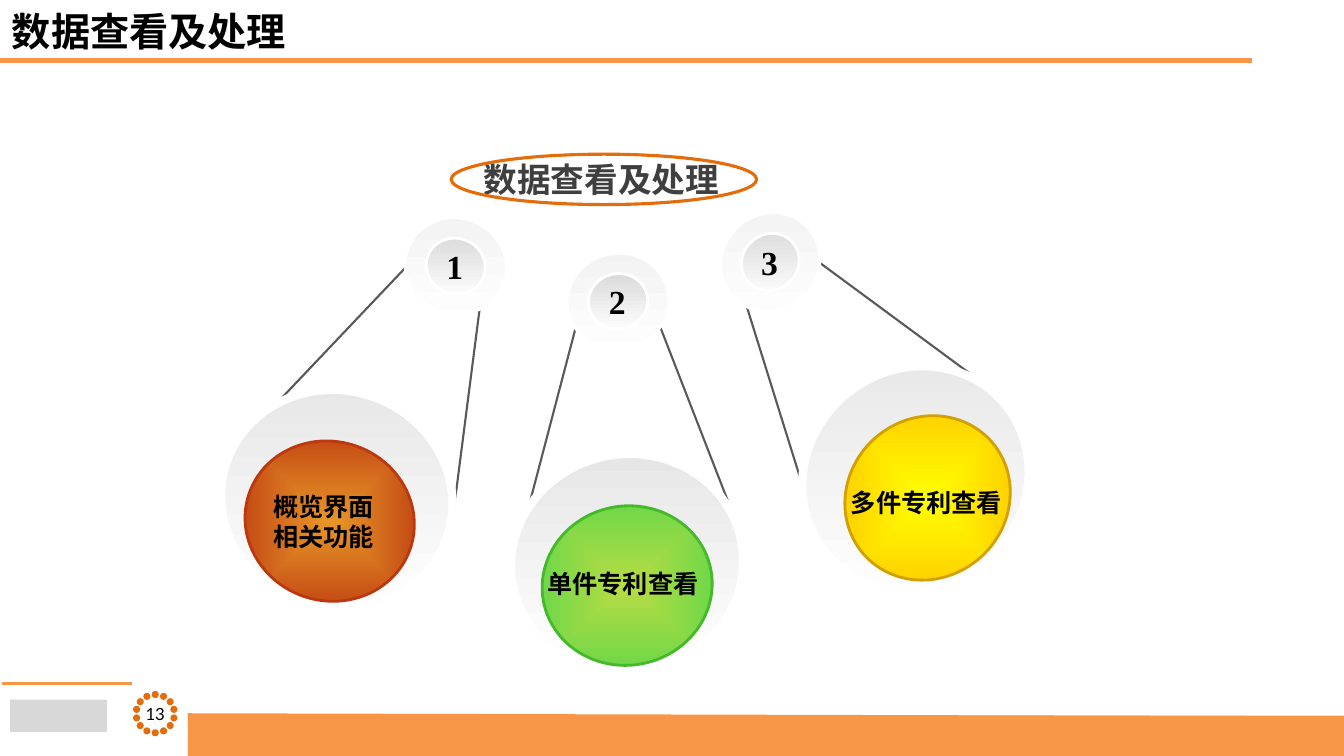
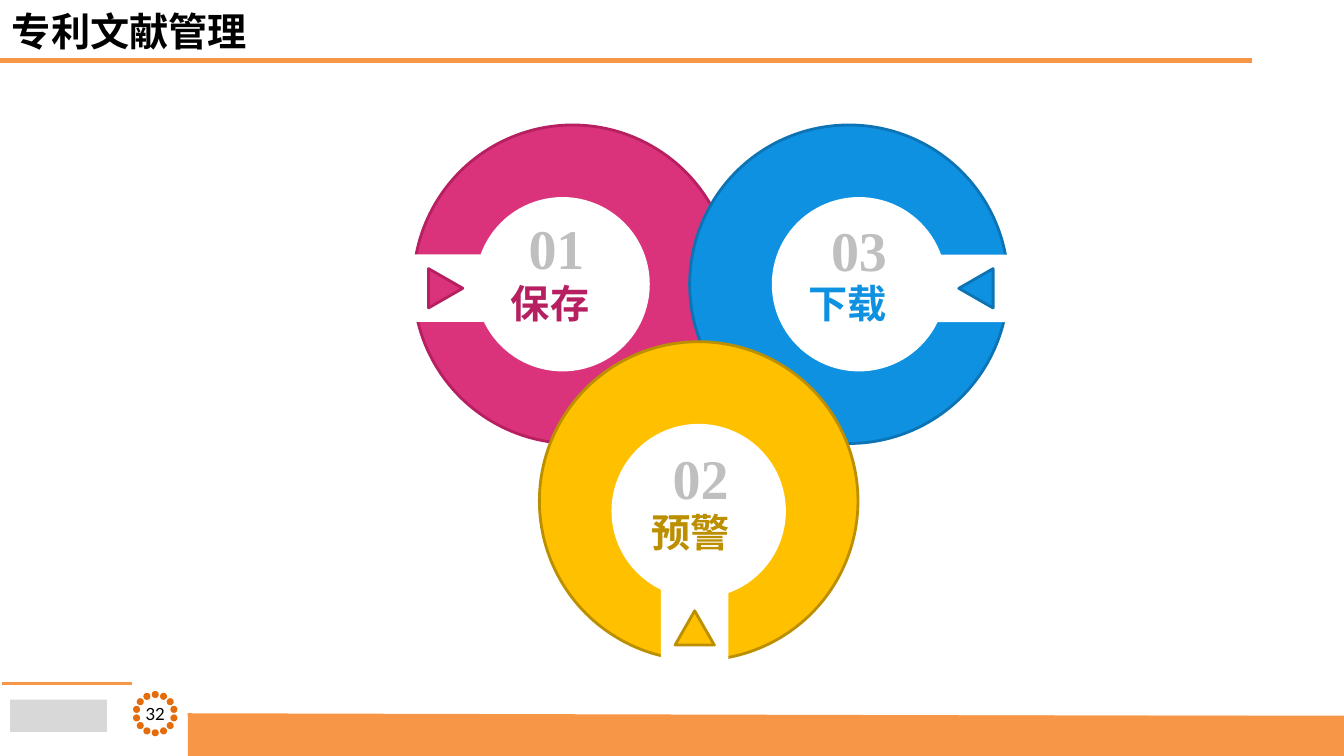
import math

from pptx import Presentation
from pptx import util as u
from pptx.dml.color import RGBColor
from pptx.enum import shapes, text
from pptx.oxml import ns, parse_xml
from pptx.util import Inches

COLOURS = {
    "band": "F79646", "accent": "E46C0A", "black": "000000", "white": "FFFFFF",
    "heading": "3F3F3F", "spoke": "595959", "number": "BFBFBF",
    "halo": "F2F2F2", "knob": "D8D8D8", "ball": "E4E4E4",
    "rust": "BC3910", "amber": "E89628",
    "green": "64D749", "lime": "B8DC44", "green edge": "44B929",
    "gold": "FFC000", "yellow": "FFFF00", "yellow edge": "D2A000",
    "pink": "DB337B", "pink edge": "B62060",
    "blue": "0F91E1", "blue edge": "0C74B4", "gold edge": "BC8F00",
}
CJK_FONT = "Noto Sans CJK SC"
SERIF_FONT = "Times New Roman"
OVAL = shapes.MSO_SHAPE.OVAL
RECTANGLE = shapes.MSO_SHAPE.RECTANGLE
TRIANGLE = shapes.MSO_SHAPE.ISOSCELES_TRIANGLE


def add_text(page, wording, left, top, width, height, colour="black", size=18, font="Lato",
             bold=True, align=None, spacing=None, centred=False):
    """Add one paragraph; centred drops the margins and centres both ways."""
    box = page.shapes.add_textbox(Inches(left), Inches(top), Inches(width), Inches(height))
    frame = box.text_frame
    frame.word_wrap = True
    if centred:
        align = text.PP_ALIGN.CENTER
        frame.vertical_anchor = text.MSO_ANCHOR.MIDDLE
        frame.margin_left = frame.margin_right = frame.margin_top = frame.margin_bottom = 0
    else:
        frame.auto_size = text.MSO_AUTO_SIZE.SHAPE_TO_FIT_TEXT
    para = frame.paragraphs[0]
    para.alignment = align
    para.line_spacing = spacing
    span = para.add_run()
    span.text = wording
    span.font.size = u.Pt(size)
    span.font.name = font
    span.font.bold = bold
    span.font.color.rgb = RGBColor.from_string(COLOURS[colour])
    east_asian = parse_xml(f'<a:ea {ns.nsdecls("a")} typeface="{CJK_FONT}"/>')
    span.font._element.find(ns.qn("a:latin")).addnext(east_asian)


def add_figure(page, kind, x, y, width, height, fill=None, line=None, weight=2,
               turn=0, radial=False):
    """Add a shape centred on x, y; fill is a colour name or a list of (percent, name) stops."""
    figure = page.shapes.add_shape(kind, Inches(x - width / 2), Inches(y - height / 2),
                                   Inches(width), Inches(height))
    figure.shadow.inherit = False
    figure.rotation = turn
    if isinstance(fill, str):
        figure.fill.solid()
        figure.fill.fore_color.rgb = RGBColor.from_string(COLOURS[fill])
    else:
        figure.fill.background()
    if isinstance(fill, list):
        stops = "".join(f'<a:gs pos="{percent * 1000}"><a:srgbClr val="{COLOURS[name]}"/></a:gs>'
                        for percent, name in fill)
        course = ('<a:path path="rect"><a:fillToRect l="50000" t="50000" r="50000" b="50000"/></a:path>'
                  if radial else '<a:lin ang="5400000" scaled="0"/>')
        gradient = parse_xml(f'<a:gradFill {ns.nsdecls("a")} rotWithShape="0">'
                             f'<a:gsLst>{stops}</a:gsLst>{course}</a:gradFill>')
        properties = figure._element.spPr
        properties.replace(properties.find(ns.qn("a:noFill")), gradient)
    if line:
        figure.line.color.rgb = RGBColor.from_string(COLOURS[line])
        figure.line.width = u.Pt(weight)
    else:
        figure.line.fill.background()


deck = Presentation()
deck.slide_width, deck.slide_height = Inches(13.33), Inches(7.5)

# What the slides share: rules, band, plain footer block, dotted page number, title
rules = [
    (13.33, 7.12, 1.86, 7.09, "band", 2),
    (1.31, 6.78, 0.02, 6.78, "band", 2),
    (0, 0.6, 12.42, 0.6, "band", 3),
]
spokes = [(*ends, "spoke", 1.5) for ends in [
    (4.48, 5.22, 4.8, 2.73), (4.15, 2.52, 2.28, 4.49),
    (7.34, 5.28, 6.43, 2.94), (5.76, 3.06, 5.07, 5.69),
    (9.87, 3.89, 7.85, 2.4), (7.35, 2.86, 8.16, 5.46),
]]
DOTS = 14
pages = []
for title, number, lines in [("数据查看及处理", "13", rules + spokes),
                             ("专利文献管理", "32", rules)]:
    page = deck.slides.add_slide(deck.slide_layouts[6])
    pages.append(page)
    for x1, y1, x2, y2, colour, weight in lines:
        line = page.shapes.add_connector(shapes.MSO_CONNECTOR.STRAIGHT, Inches(x1), Inches(y1),
                                         Inches(x2), Inches(y2))
        line.line.color.rgb = RGBColor.from_string(COLOURS[colour])
        line.line.width = u.Pt(weight)
        line._element.spPr.append(parse_xml(f'<a:effectLst {ns.nsdecls("a")}/>'))
    add_figure(page, RECTANGLE, 7.6, 7.3, 11.47, 0.4, "band")
    add_figure(page, RECTANGLE, 0.58, 7.1, 0.96, 0.32, "knob")
    for dot in range(DOTS):
        angle = 2 * math.pi * dot / DOTS
        add_figure(page, OVAL, 1.54 + 0.19 * math.sin(angle), 7.08 - 0.19 * math.cos(angle),
                   0.07, 0.07, "accent")
    add_text(page, number, 1.38, 6.93, 0.32, 0.31, size=12, bold=False, centred=True)
    add_text(page, title, 0.02, 0.02, 4.46, 0.57, size=28, font=CJK_FONT)

overview, management = pages

# Three numbered knobs, each leading to a ball
topics = [
    # number, turn, knob, ball, core, core colours, edge, label, label box
    ("1", 18.3, (4.52, 2.64), (3.34, 4.96), (3.27, 5.17),
     [(0, "amber"), (100, "rust")], "rust", "概览界面相关功能", (2.61, 4.82, 1.22, 0.71)),
    ("2", 349.6, (6.13, 2.99), (6.22, 5.59), (6.22, 5.81),
     [(0, "lime"), (100, "green")], "green edge", "单件专利查看", (5.33, 5.59, 1.78, 0.4)),
    ("3", 317.5, (7.64, 2.6), (9.08, 4.75), (9.2, 4.94),
     [(0, "yellow"), (100, "gold")], "yellow edge", "多件专利查看", (8.34, 4.79, 1.88, 0.4)),
]
for number, turn, knob, ball, core, core_fill, edge, label, label_box in topics:
    add_figure(overview, OVAL, *knob, 1.01, 0.95, [(0, "halo"), (100, "white")], "white", turn=turn)
    add_figure(overview, OVAL, *knob, 0.59, 0.55, [(0, "knob"), (100, "white")], "white", turn=turn)
    add_figure(overview, OVAL, *ball, 2.31, 2.17, [(0, "ball"), (90, "white"), (100, "white")],
               "white", weight=6, turn=turn)
    add_figure(overview, OVAL, *core, 1.69, 1.58, core_fill, edge, turn=turn, radial=True)
    add_text(overview, label, *label_box)
    add_text(overview, number, knob[0] - 0.19, knob[1] - 0.25, 0.57, 0.5,
             size=24, font=SERIF_FONT)
add_text(overview, "数据查看及处理", 3.45, 1.53, 5.03, 0.5, colour="heading",
         size=24, font="Calibri", align=text.PP_ALIGN.CENTER)
add_figure(overview, OVAL, 5.99, 1.78, 3.03, 0.5, line="accent", weight=2.25)

# Three rings, each opened towards one side (dx, dy)
rings = [
    # number, label, fill, edge, label colour, centre, opening, turn, number and label places
    ("01", "保存", "pink", "pink edge", "pink edge", (5.68, 2.82), (-1, 0), 90,
     (4.94, 2.2), (4.97, 2.81)),
    ("03", "下载", "blue", "blue edge", "blue", (8.42, 2.82), (1, 0), 270,
     (7.94, 2.22), (7.92, 2.81)),
    ("02", "预警", "gold", "gold edge", "gold edge", (6.93, 4.97), (0, 1), 0,
     (6.37, 4.48), (6.36, 5.08)),
]
for number, label, fill, edge, label_colour, (x, y), (dx, dy), turn, number_at, label_at in rings:
    side_x, side_y = x - 0.04 * abs(dy), y + 0.04 * abs(dx)
    add_figure(management, OVAL, x, y, 3.16, 3.16, fill, edge)
    add_figure(management, RECTANGLE, side_x + 1.2 * dx, side_y + 1.2 * dy, 0.67, 0.86, "white",
               turn=turn)
    add_figure(management, OVAL, x + 0.1 * dx, y + 0.1 * dy, 1.73, 1.73, "white")
    add_figure(management, TRIANGLE, side_x + 1.26 * dx, side_y + 1.26 * dy, 0.39, 0.34, fill, edge,
               turn=turn)
    add_text(management, label, *label_at, 1.16, 0.48, colour=label_colour,
             size=28, font="Calibri", spacing=0.8)
    add_text(management, number, *number_at, 1.16, 0.64, colour="number",
             size=40, font=SERIF_FONT, align=text.PP_ALIGN.CENTER, spacing=0.8)

deck.save("out.pptx")
